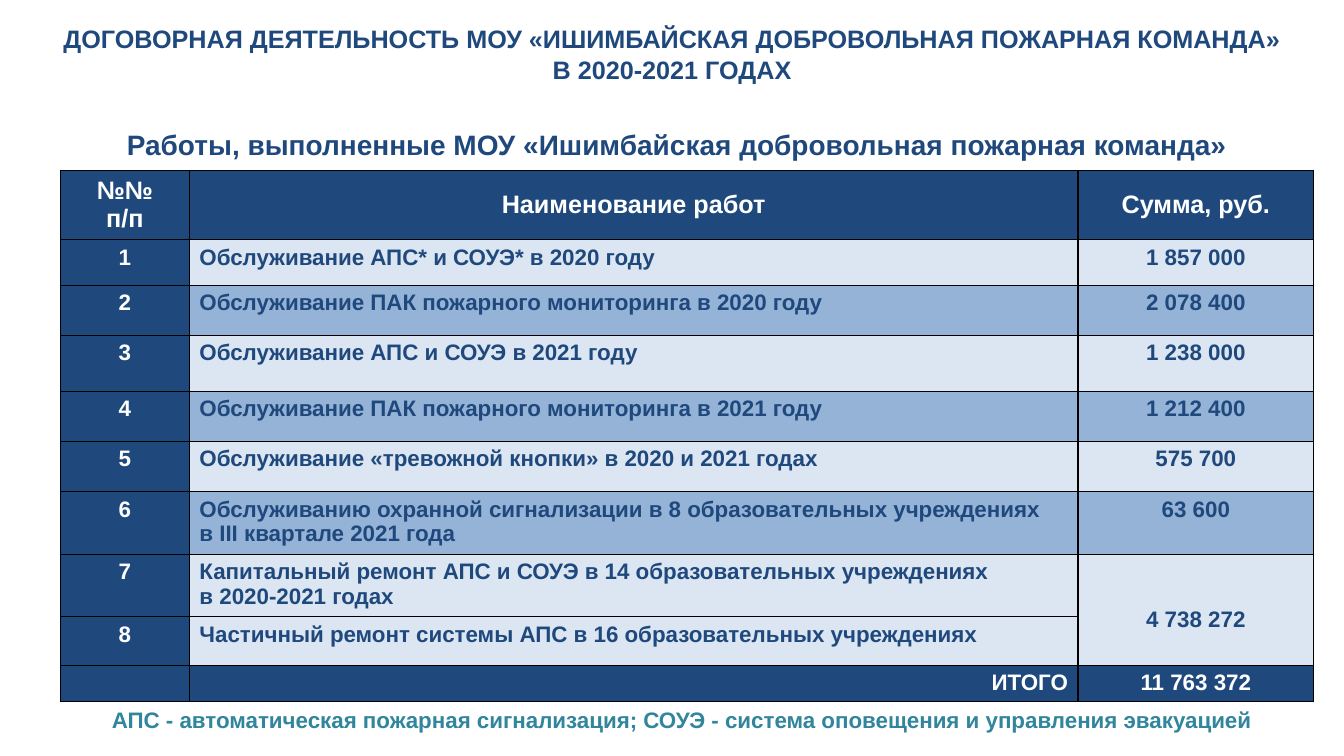
from copy import deepcopy

from lxml.etree import SubElement
from pptx import Presentation
from pptx.dml.color import RGBColor
from pptx.enum.text import MSO_ANCHOR as Anchor, MSO_AUTO_SIZE as AutoSize, PP_ALIGN as Align
from pptx.oxml.ns import qn
from pptx.util import Emu, Pt

PX = 9144  # 100 px to the inch
NAVY, PALE, BLUE, TEAL = "1F497D", "DCE6F2", "95B3D7", "31859C"
WHITE, BLACK = "FFFFFF", "000000"

COLUMN_WIDTHS = [128, 882, 234]
ROW_HEIGHTS = [69, 45, 50, 55, 50, 50, 62, 62, 48, 36]
HEADERS = ["№№\vп/п", "Наименование работ", "Сумма, руб."]
WORKS = [
    ("Обслуживание АПС* и СОУЭ* в 2020 году", "1 857 000"),
    ("Обслуживание ПАК пожарного мониторинга в 2020 году", "2 078 400"),
    ("Обслуживание АПС и СОУЭ в 2021 году", "1 238 000"),
    ("Обслуживание ПАК пожарного мониторинга в 2021 году", "1 212 400"),
    ("Обслуживание «тревожной кнопки» в 2020 и 2021 годах", "575 700"),
    ("Обслуживанию охранной сигнализации в 8 образовательных учреждениях\n"
     "в III квартале 2021 года", "63 600"),
    ("Капитальный ремонт АПС и СОУЭ в 14 образовательных учреждениях\n"
     "в 2020-2021 годах", "4 738 272"),
    ("Частичный ремонт системы АПС в 16 образовательных учреждениях", ""),
]


def px(*lengths):
    return [Emu(length * PX) for length in lengths]


def color(value):
    return RGBColor.from_string(value)


def set_all(target, values):
    for name, value in values.items():
        setattr(target, name, value)


def write(frame, text, size, text_color, align=Align.LEFT):
    frame.text = text
    for paragraph in frame.paragraphs:
        paragraph.alignment = align
        for run in paragraph.runs:
            set_all(run.font, {"name": "Arial", "size": Pt(size), "bold": True})
            run.font.color.rgb = color(text_color)
        # Line breaks take the size of the text around them
        for line_break in paragraph._p.findall(qn("a:br")):
            line_break.insert(0, deepcopy(paragraph.runs[0]._r.rPr))


def add_title(slide, text):
    title = slide.shapes.title
    set_all(title, dict(zip(("left", "top", "width", "height"), px(0, 0, 1334, 107))))
    write(title.text_frame, text, 18, NAVY, Align.CENTER)
    title.text_frame.vertical_anchor = Anchor.MIDDLE


def add_caption(slide, box, text, size, text_color, wrap=True, indent=10):
    frame = slide.shapes.add_textbox(*px(*box)).text_frame
    set_all(frame, {"word_wrap": wrap, "auto_size": AutoSize.SHAPE_TO_FIT_TEXT,
                    "margin_left": Emu(indent * PX)})
    write(frame, text, size, text_color)


def add_borders(cell):
    properties = cell._tc.get_or_add_tcPr()
    for position, side in enumerate(("a:lnL", "a:lnR", "a:lnT", "a:lnB")):
        line = SubElement(properties, qn(side), w=str(Pt(1)))
        fill = SubElement(line, qn("a:solidFill"))
        SubElement(fill, qn("a:srgbClr"), val=BLACK)
        properties.insert(position, line)


def fill_cell(cell, text, fill, text_color, align=Align.CENTER, size=16, anchor=Anchor.TOP):
    cell.fill.solid()
    cell.fill.fore_color.rgb = color(fill)
    cell.vertical_anchor = anchor
    add_borders(cell)
    if text:
        write(cell.text_frame, text, size, text_color, align)
    else:
        set_all(cell, {"margin_top": 0, "margin_bottom": 0})


def add_works_table(slide):
    box = px(60, 169, sum(COLUMN_WIDTHS), sum(ROW_HEIGHTS))
    table = slide.shapes.add_table(len(ROW_HEIGHTS), len(COLUMN_WIDTHS), *box).table
    set_all(table, {"first_row": False, "horz_banding": False})
    for column, width in zip(table.columns, px(*COLUMN_WIDTHS)):
        column.width = width
    for row, height in zip(table.rows, px(*ROW_HEIGHTS)):
        row.height = height

    # Header
    for column, header in enumerate(HEADERS):
        fill_cell(table.cell(0, column), header, NAVY, WHITE, size=18, anchor=Anchor.MIDDLE)

    # Works, in alternating bands; the last two share one band and one sum
    last = len(WORKS)
    for number, (work, amount) in enumerate(WORKS, start=1):
        band = PALE if number % 2 or number == last else BLUE
        fill_cell(table.cell(number, 0), str(number), NAVY, WHITE)
        fill_cell(table.cell(number, 1), work, band, NAVY, Align.LEFT)
        fill_cell(table.cell(number, 2), amount, band, NAVY)
    shared_sum = table.cell(last - 1, 2)
    shared_sum.merge(table.cell(last, 2))
    shared_sum.margin_top = Emu(53 * PX)

    # Total
    total = [("", Align.CENTER), ("ИТОГО", Align.RIGHT), ("11 763 372", Align.CENTER)]
    for column, (text, align) in enumerate(total):
        fill_cell(table.cell(last + 1, column), text, NAVY, WHITE, align)


def main():
    presentation = Presentation()
    set_all(presentation, dict(zip(("slide_width", "slide_height"), px(1334, 750))))
    slide = presentation.slides.add_slide(presentation.slide_layouts[5])
    add_title(slide, "ДОГОВОРНАЯ ДЕЯТЕЛЬНОСТЬ МОУ «ИШИМБАЙСКАЯ ДОБРОВОЛЬНАЯ ПОЖАРНАЯ КОМАНДА»\v"
                     "В 2020-2021 ГОДАХ")
    add_works_table(slide)
    add_caption(slide, (116, 122, 1121, 44),
                "Работы, выполненные МОУ «Ишимбайская добровольная пожарная команда»",
                20, NAVY, wrap=False)
    add_caption(slide, (76, 696, 1228, 37),
                "АПС - автоматическая пожарная сигнализация; "
                "СОУЭ - система оповещения и управления эвакуацией",
                16, TEAL, indent=35)
    presentation.save("out.pptx")


if __name__ == "__main__":
    main()
